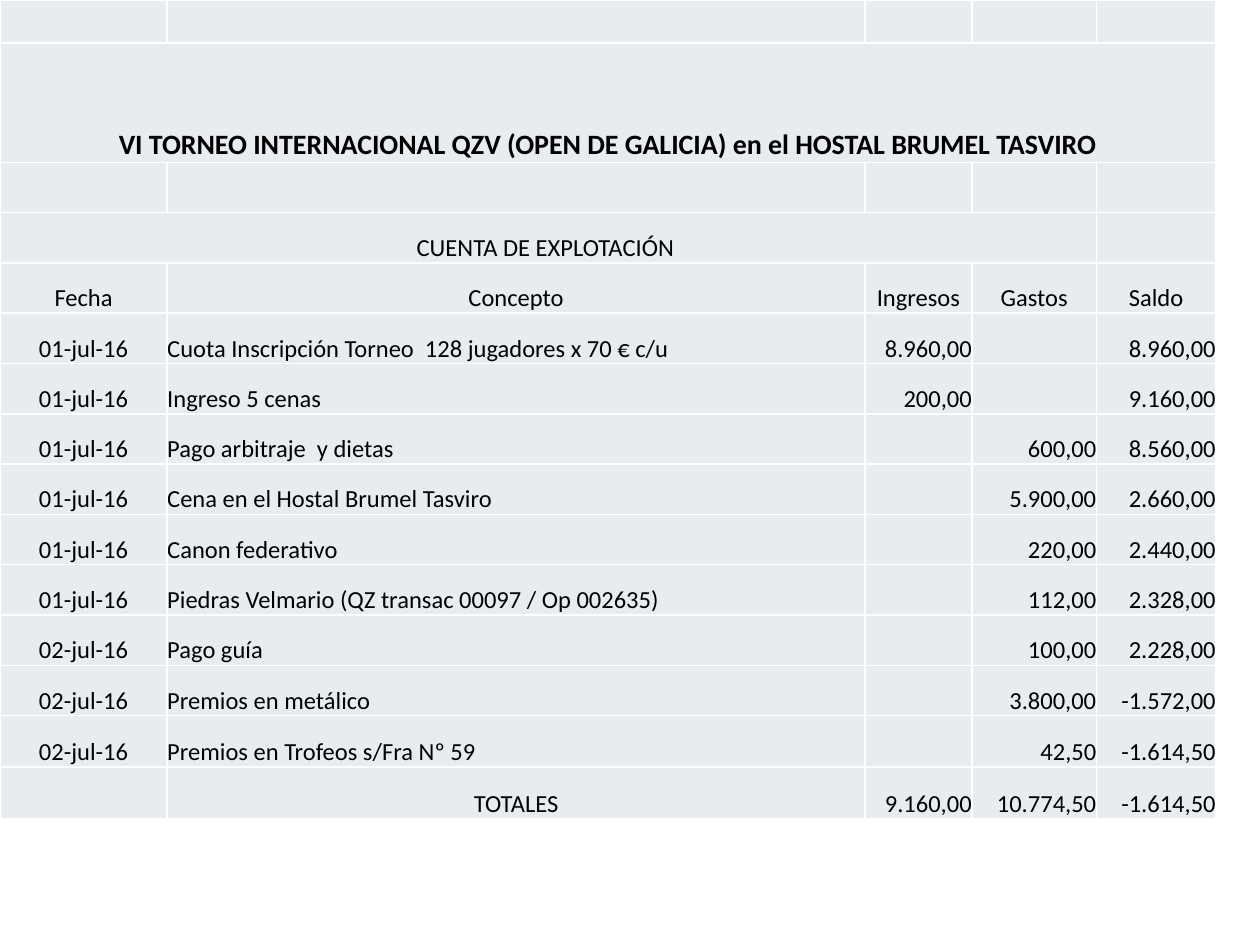
from lxml import etree
from pptx import Presentation
from pptx.dml.color import RGBColor
from pptx.enum import text
from pptx.oxml.ns import qn
from pptx.util import Inches, Pt

SLIDE_W, SLIDE_H = Inches(10), Inches(7.5)
COLORS = {"cell": "E8ECF0", "border": "FFFFFF", "ink": "000000"}
FONT = "Calibri"
LEFT, CENTER, RIGHT = (text.PP_ALIGN.LEFT, text.PP_ALIGN.CENTER,
                       text.PP_ALIGN.RIGHT)

# Relative column widths and row heights
COLUMNS = [1.33, 5.55, 0.85, 0.99, 0.95]
ROWS = [0.34, 0.95] + [0.4] * 11 + [0.41] * 2
ALIGNMENTS = [CENTER, LEFT, RIGHT, RIGHT, RIGHT]

TITLE = "VI TORNEO INTERNACIONAL QZV (OPEN DE GALICIA) en el HOSTAL BRUMEL TASVIRO"
SUBTITLE = "CUENTA DE EXPLOTACIÓN "
HEADINGS = ["Fecha", "Concepto", "Ingresos", "Gastos", "Saldo"]
ENTRIES = [
    ["01-jul-16", "Cuota Inscripción Torneo  128 jugadores x 70 € c/u", "8.960,00", "", "8.960,00"],
    ["01-jul-16", "Ingreso 5 cenas", "200,00", "", "9.160,00"],
    ["01-jul-16", "Pago arbitraje  y dietas", "", "600,00", "8.560,00"],
    ["01-jul-16", "Cena en el Hostal Brumel Tasviro", "", "5.900,00", "2.660,00"],
    ["01-jul-16", "Canon federativo", "", "220,00", "2.440,00"],
    ["01-jul-16", "Piedras Velmario (QZ transac 00097 / Op 002635)", "", "112,00", "2.328,00"],
    ["02-jul-16", "Pago guía", "", "100,00", "2.228,00"],
    ["02-jul-16", "Premios en metálico", "", "3.800,00", "-1.572,00"],
    ["02-jul-16", "Premios en Trofeos s/Fra Nº 59", "", "42,50", "-1.614,50"],
]
TOTALS = ["", "TOTALES", "9.160,00", "10.774,50", "-1.614,50"]


def write(cell, content, *, align=LEFT, size=14, bold=False):
    """Put formatted text in a table cell."""
    if not content:
        return
    paragraph = cell.text_frame.paragraphs[0]
    paragraph.alignment = align
    run = paragraph.add_run()
    run.text = content
    run.font.name, run.font.size, run.font.bold = FONT, Pt(size), bold
    run.font.color.rgb = RGBColor.from_string(COLORS["ink"])


def style_cell(cell):
    """Give a cell its borders, fill, margins and anchor."""
    properties = cell._tc.get_or_add_tcPr()
    for side in ("lnL", "lnR", "lnT", "lnB"):
        line = etree.SubElement(properties, qn(f"a:{side}"), w=str(Pt(1)))
        fill = etree.SubElement(line, qn("a:solidFill"))
        etree.SubElement(fill, qn("a:srgbClr"), val=COLORS["border"])
    cell.fill.solid()
    cell.fill.fore_color.rgb = RGBColor.from_string(COLORS["cell"])
    cell.margin_left = cell.margin_right = 0
    cell.margin_top = cell.margin_bottom = 0
    cell.vertical_anchor = text.MSO_ANCHOR.BOTTOM


def add_account(slide, left, top, width, height):
    """Place the profit and loss table in the given box."""
    account = slide.shapes.add_table(
        len(ROWS), len(COLUMNS), left, top, width, height).table
    account.first_row = account.horz_banding = False
    for column, share in zip(account.columns, COLUMNS):
        column.width = int(width * share / sum(COLUMNS))
    for row, share in zip(account.rows, ROWS):
        row.height = int(height * share / sum(ROWS))
    for cell in account.iter_cells():
        style_cell(cell)

    # Title and subtitle across merged cells
    account.cell(1, 0).merge(account.cell(1, 4))
    write(account.cell(1, 0), TITLE, align=CENTER, size=16, bold=True)
    account.cell(3, 0).merge(account.cell(3, 3))
    write(account.cell(3, 0), SUBTITLE, align=CENTER)

    # Headings, entries and totals
    for r, record in enumerate([HEADINGS, *ENTRIES, TOTALS], start=4):
        for c, (content, align) in enumerate(zip(record, ALIGNMENTS)):
            centered = record is HEADINGS or content == "TOTALES"
            write(account.cell(r, c), content,
                  align=CENTER if centered else align)


def main():
    deck = Presentation()
    deck.slide_width, deck.slide_height = SLIDE_W, SLIDE_H
    slide = deck.slides.add_slide(deck.slide_layouts[6])
    add_account(slide, 0, 0, int(SLIDE_W * 0.965), int(SLIDE_H * 0.867))
    deck.save("out.pptx")


if __name__ == "__main__":
    main()
